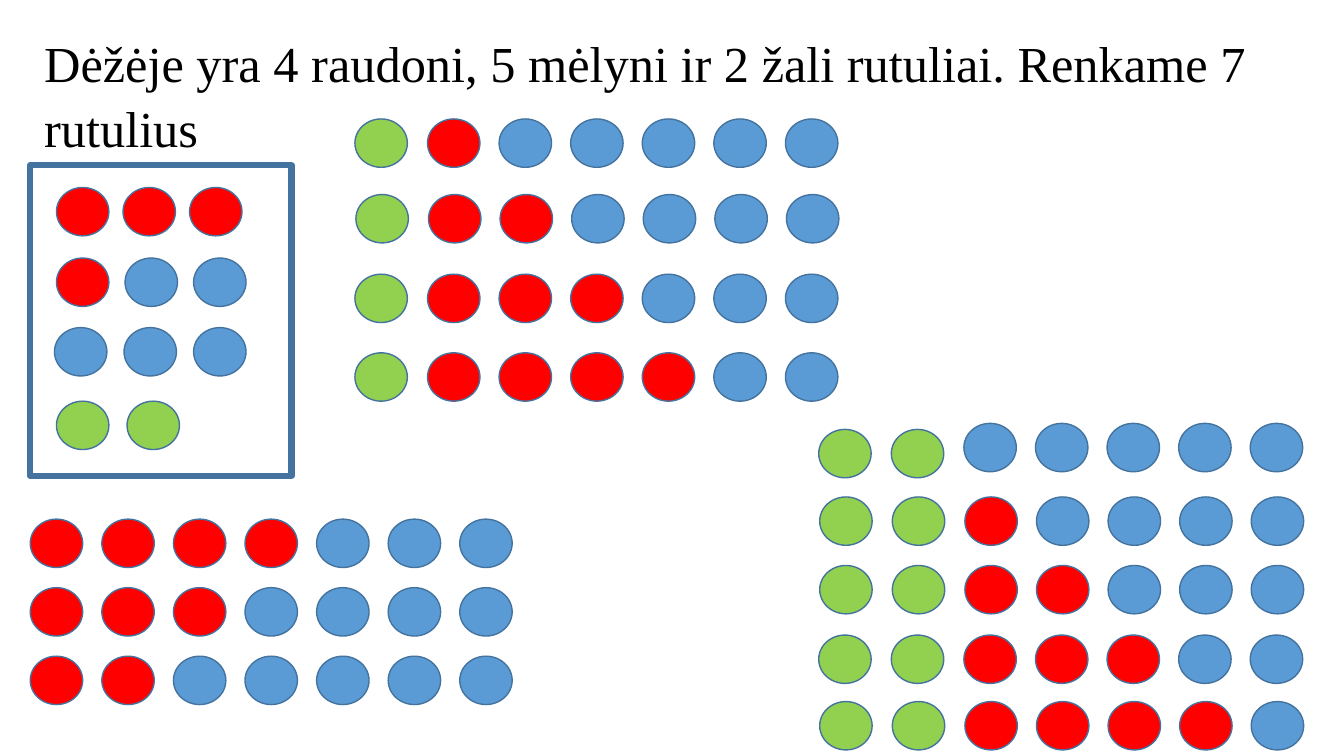
"""Build a slide that lists the ways to pick 7 balls from a box of 11."""
from pptx import Presentation
from pptx import util as u
from pptx.dml.color import RGBColor
from pptx.enum import shapes, text

TITLE = "Dėžėje yra 4 raudoni, 5 mėlyni ir 2 žali rutuliai. Renkame 7 rutulius"
FONT = "Times New Roman"
BLACK = RGBColor(0x00, 0x00, 0x00)
WHITE = RGBColor(0xFF, 0xFF, 0xFF)
OUTLINE = RGBColor(0x43, 0x73, 0x9E)
BALL_COLOURS = {
    "R": RGBColor(0xFF, 0x00, 0x00),
    "B": RGBColor(0x5B, 0x9B, 0xD5),
    "G": RGBColor(0x92, 0xD0, 0x50),
}

BALL_WIDTH, BALL_HEIGHT = 0.52, 0.48
STEP = 0.71
GREEN_EXTRA = 0.01
BOX_FRAME = (0.3, 1.64, 2.59, 3.08)

# Each row: left, top, step between balls, ball colours
BOX_ROWS = [
    (0.56, 1.86, 0.66, "RRR"),
    (0.56, 2.56, 0.68, "RBB"),
    (0.54, 3.25, 0.69, "BBB"),
    (0.56, 3.98, 0.69, "GG"),
]
NO_GREEN_ROWS = [
    (0.3, 5.15, STEP, "RRRRBBB"),
    (0.3, 5.83, STEP, "RRRBBBB"),
    (0.3, 6.51, STEP, "RRBBBBB"),
]
ONE_GREEN_ROWS = [
    (3.52, 1.18, STEP, "GRBBBBB"),
    (3.53, 1.93, STEP, "GRRBBBB"),
    (3.52, 2.72, STEP, "GRRRBBB"),
    (3.52, 3.5, STEP, "GRRRRBB"),
]
TWO_GREEN_ROWS = [
    (8.12, 4.26, STEP, "GG"),
    (9.56, 4.2, STEP, "BBBBB"),
    (8.13, 4.93, STEP, "GGRBBBB"),
    (8.13, 5.61, STEP, "GGRRBBB"),
    (8.12, 6.3, STEP, "GGRRRBB"),
    (8.13, 6.96, STEP, "GGRRRRB"),
]


def add_outlined(group, kind, frame, fill, line_width):
    shape = group.shapes.add_shape(kind, *map(u.Inches, frame))
    shape.shadow.inherit = False
    shape.fill.solid()
    shape.fill.fore_color.rgb = fill
    shape.line.color.rgb = OUTLINE
    shape.line.width = u.Pt(line_width)


def add_balls(group, rows):
    for left, top, step, colours in rows:
        for colour in colours:
            frame = (left, top, BALL_WIDTH, BALL_HEIGHT)
            add_outlined(group, shapes.MSO_SHAPE.OVAL, frame, BALL_COLOURS[colour], 1)
            left += step + (GREEN_EXTRA if colour == "G" else 0)


def add_title(slide):
    box = slide.shapes.add_textbox(*map(u.Inches, (0.34, 0.23, 12.43, 1.31)))
    frame = box.text_frame
    frame.word_wrap = True
    frame.auto_size = text.MSO_AUTO_SIZE.SHAPE_TO_FIT_TEXT
    paragraph = frame.paragraphs[0]
    paragraph.line_spacing = 1.07
    run = paragraph.add_run()
    run.text = TITLE
    run.font.name = FONT
    run.font.size = u.Pt(36)
    run.font.color.rgb = BLACK


def main():
    presentation = Presentation()
    presentation.slide_width = u.Inches(13.33)
    presentation.slide_height = u.Inches(7.5)
    slide = presentation.slides.add_slide(presentation.slide_layouts[6])
    add_title(slide)
    box = slide.shapes.add_group_shape()
    add_outlined(box, shapes.MSO_SHAPE.RECTANGLE, BOX_FRAME, WHITE, 4.5)
    add_balls(box, BOX_ROWS)
    for rows in (NO_GREEN_ROWS, ONE_GREEN_ROWS, TWO_GREEN_ROWS):
        add_balls(slide.shapes.add_group_shape(), rows)
    presentation.save("out.pptx")


if __name__ == "__main__":
    main()
